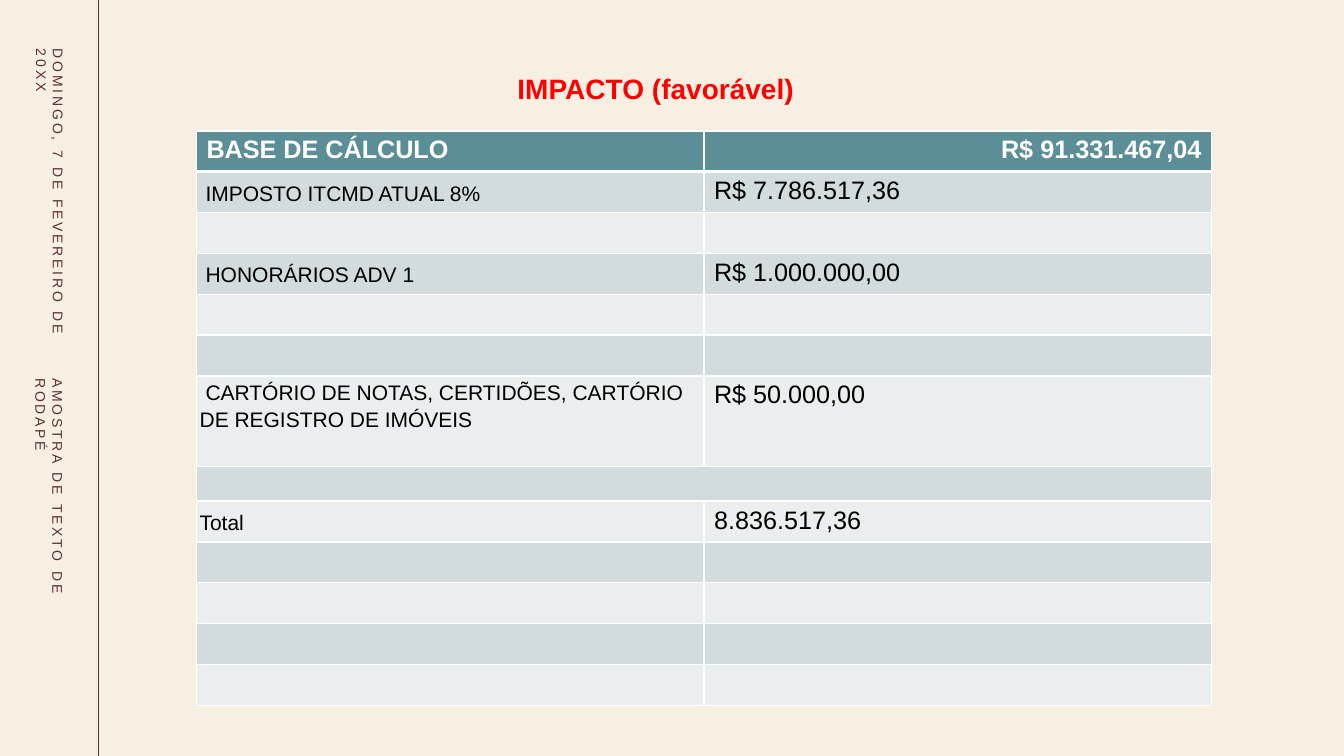
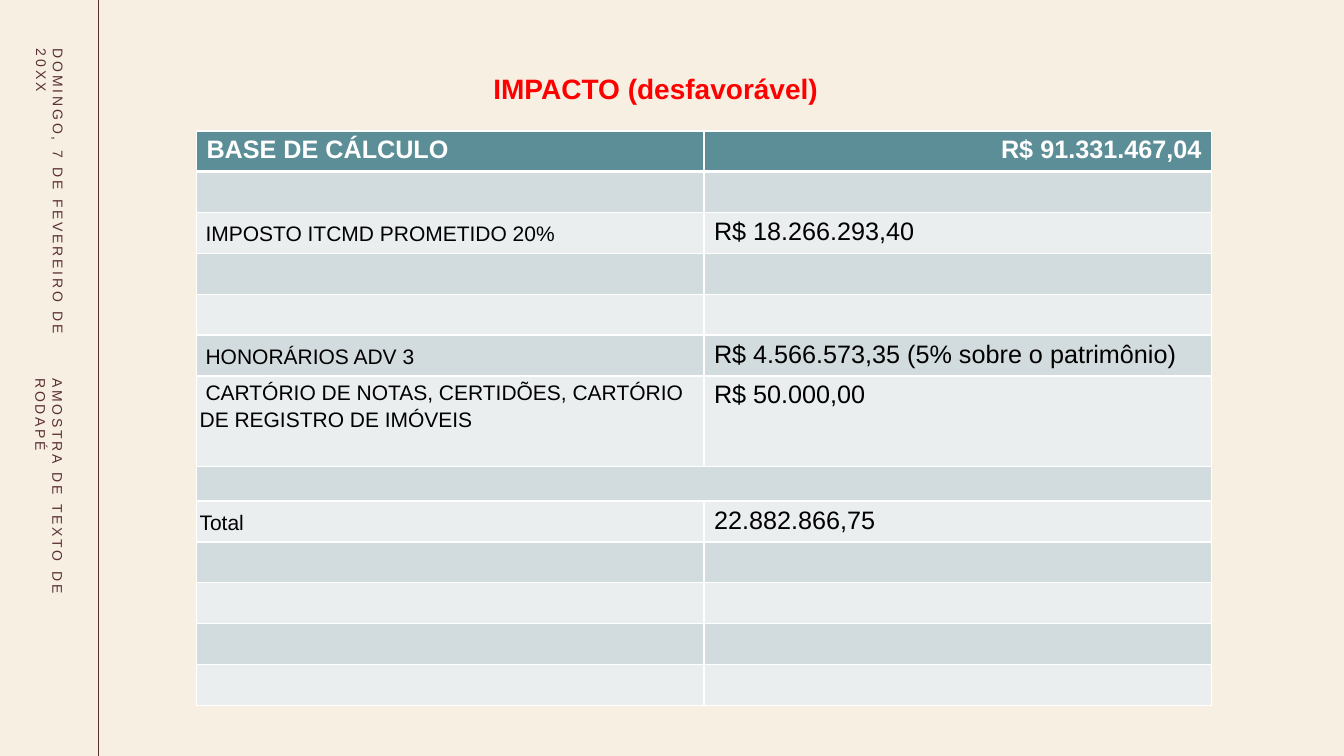
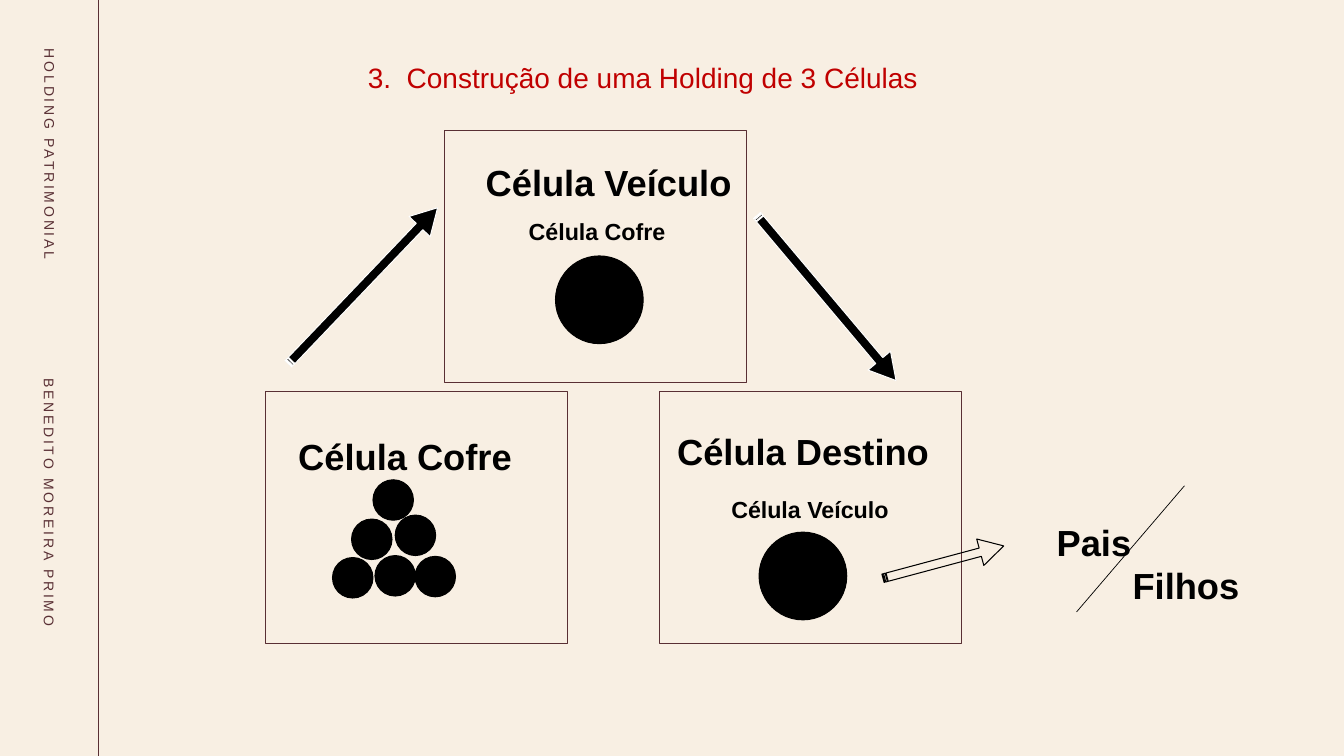
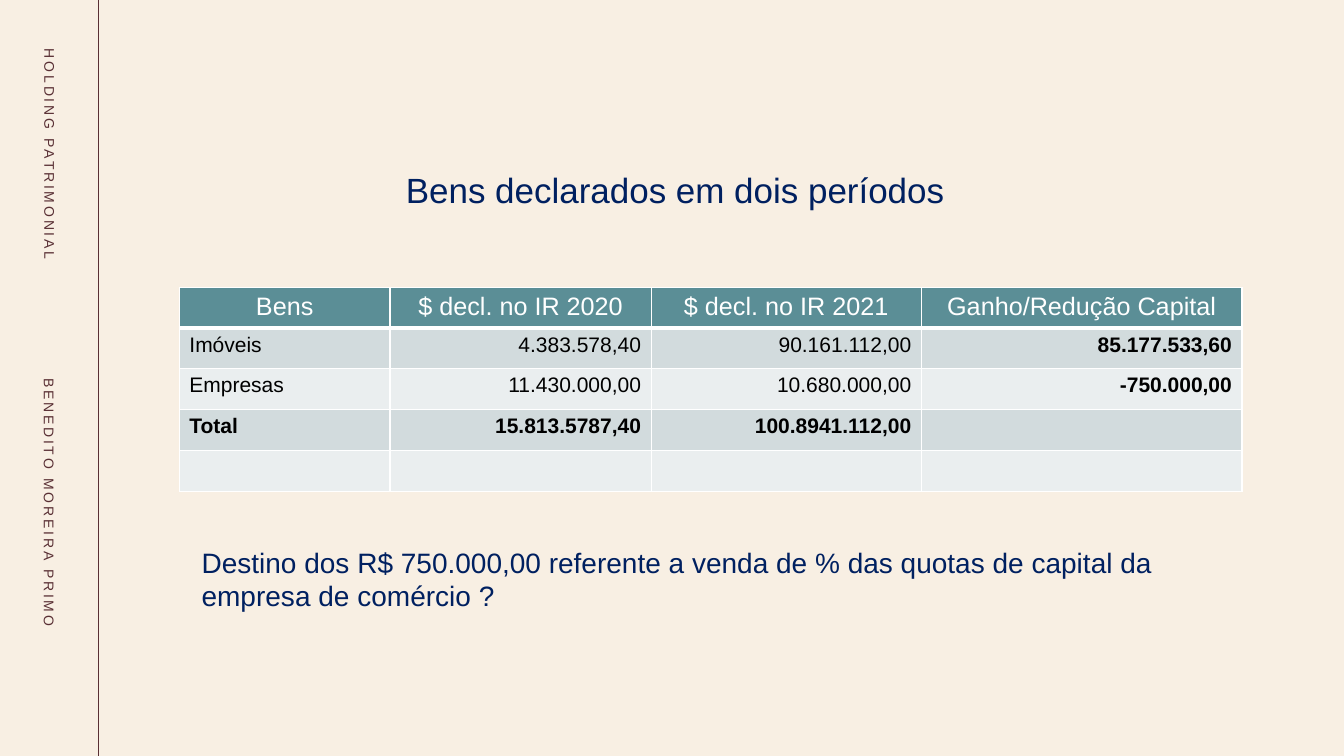
import pptx
import pptx.util
import pptx.dml.color
import pptx.enum.text
import pptx.enum.shapes
import pptx.oxml
import pptx.oxml.ns
import lxml.etree

Cm = pptx.util.Cm
Pt = pptx.util.Pt
RGB = pptx.dml.color.RGBColor.from_string
Shape = pptx.enum.shapes.MSO_SHAPE
Side = pptx.enum.text.PP_ALIGN
Mid = pptx.enum.text.MSO_ANCHOR.MIDDLE
qn = pptx.oxml.ns.qn

HUES = {"sand": "F8EFE3", "wine": "592F34", "red": "FF0000", "brick": "C00000",
        "navy": "002060", "teal": "5B8E96", "dark": "D2DBDD", "pale": "EAEEEF",
        "white": "FFFFFF", "black": "000000"}
FONT = "Arial"


def put(frame, text, size, hue, bold=False, side=Side.LEFT, gap=None):
    """Write one run into the first paragraph of a text frame."""
    frame.word_wrap = True
    para = frame.paragraphs[0]
    para.alignment = side
    if gap:
        para.line_spacing = gap
    run = para.add_run()
    run.text = text
    run.font.name = FONT
    run.font.size = Pt(size)
    run.font.bold = bold
    run.font.color.rgb = RGB(HUES[hue])
    return run


def grid(slide, left, top, cols, rows):
    """Add a table with a teal header, banded rows and white borders."""
    table = slide.shapes.add_table(len(rows), len(cols), Cm(left), Cm(top),
                                   Cm(sum(cols)), Cm(sum(rows))).table
    table.first_row = table.horz_banding = False
    for col, width in zip(table.columns, cols):
        col.width = Cm(width)
    for r, high in enumerate(rows):
        table.rows[r].height = Cm(high)
        for cell in table.rows[r].cells:
            cell.margin_top = cell.margin_bottom = Cm(0.13 if r == 0 else 0.05)
            cell.fill.solid()
            hue = "teal" if r == 0 else "dark" if r % 2 else "pale"
            cell.fill.fore_color.rgb = RGB(HUES[hue])
            # Borders come before the fill; the header has a thick lower edge
            for n, edge in enumerate(("lnL", "lnR", "lnT", "lnB")):
                thick = (r, edge) in ((0, "lnB"), (1, "lnT"))
                line = lxml.etree.Element(qn("a:" + edge), w=str(Pt(3 if thick else 1)))
                fill = lxml.etree.SubElement(line, qn("a:solidFill"))
                lxml.etree.SubElement(fill, qn("a:srgbClr"), val=HUES["white"])
                cell._tc.get_or_add_tcPr().insert(n, line)
    return table


deck = pptx.Presentation()
deck.slide_width, deck.slide_height = Cm(33.87), Cm(19.05)
blank = deck.slide_layouts[6]
blank.background.fill.solid()
blank.background.fill.fore_color.rgb = RGB(HUES["sand"])
slides = [deck.slides.add_slide(blank) for _ in range(4)]
good, bad, cells, goods = slides

# Lines: the side rule, which moves to the layout, and the slash
rule, slash = [], []
for keep, slide, ends, hue, width in (
        (rule, good, (2.49, 0, 2.49, 19.05), "wine", 0.75),
        (slash, cells, (29.85, 12.24, 27.13, 15.42), "black", 0.5)):
    line = slide.shapes.add_connector(pptx.enum.shapes.MSO_CONNECTOR.STRAIGHT,
                                      *[Cm(v) for v in ends])
    line.line.color.rgb = RGB(HUES[hue])
    line.line.width = Pt(width)
    lxml.etree.SubElement(line._element.spPr, qn("a:effectLst"))
    keep.append(line)
blank.shapes._spTree.append(rule[0]._element)

# Turned footers in the side band
dated = ("DOMINGO, 7 DE FEVEREIRO DE 20XX", "AMOSTRA DE TEXTO DE RODAPÉ")
named = ("HOLDING PATRIMONIAL", "BENEDITO MOREIRA PRIMO")
for slide, words in zip(slides, (dated, dated, named, named)):
    for text, left, top, width in zip(words, (-2.59, -2.26), (3.84, 11.79), (7.7, 7.01)):
        box = slide.shapes.add_textbox(Cm(left), Cm(top), Cm(width), Cm(2.49))
        box.rotation = 90
        frame = box.text_frame
        frame.margin_left = frame.margin_right = 0
        frame.margin_top = frame.margin_bottom = Cm(0.2)
        frame.vertical_anchor = Mid
        run = put(frame, text, 10, "wine")
        run._r.get_or_add_rPr().set("spc", "200")

# Titles and the closing question
for slide, spot, text, size, hue, bold, side in (
        (good, (4.7, 1.68, 23.65, 1.12), "IMPACTO (favorável)",
         20, "red", True, Side.CENTER),
        (bad, (4.7, 1.68, 23.65, 1.12), "IMPACTO (desfavorável)",
         20, "red", True, Side.CENTER),
        (cells, (6.63, 1.4, 19.15, 1.12), "3.  Construção de uma Holding de 3 Células",
         20, "brick", False, Side.CENTER),
        (goods, (9.98, 4.11, 14.78, 1.32), "Bens declarados em dois períodos",
         25, "navy", False, Side.LEFT),
        (goods, (4.83, 13.61, 26.09, 1.96),
         "Destino dos R$ 750.000,00 referente a venda de % das quotas de capital da "
         "empresa de comércio ?", 20, "navy", False, Side.LEFT)):
    box = slide.shapes.add_textbox(*[Cm(v) for v in spot])
    put(box.text_frame, text, size, hue, bold, side)

# Impact tables: row number, label, amount
deed = (6, "CARTÓRIO DE NOTAS, CERTIDÕES, CARTÓRIO DE REGISTRO DE IMÓVEIS", "R$ 50.000,00")
costs = (
    (good, ((1, "IMPOSTO ITCMD ATUAL 8%", "R$ 7.786.517,36"),
            (3, "HONORÁRIOS ADV 1", "R$ 1.000.000,00"),
            deed, (8, "Total", "8.836.517,36"))),
    (bad, ((2, "IMPOSTO ITCMD PROMETIDO 20%", "R$ 18.266.293,40"),
           (5, "HONORÁRIOS ADV 3", "R$ 4.566.573,35 (5% sobre o patrimônio)"),
           deed, (8, "Total", "22.882.866,75"))))
for slide, items in costs:
    table = grid(slide, 4.95, 3.3, [12.79] * 2,
                 [1] + [1.03] * 5 + [2.29, 0.81] + [1.03] * 5)
    table.cell(7, 0).merge(table.cell(7, 1))
    put(table.cell(0, 0).text_frame, "BASE DE CÁLCULO", 18, "white", True)
    put(table.cell(0, 1).text_frame, "R$ 91.331.467,04", 18, "white", True, Side.RIGHT)
    for r, label, sum_ in items:
        head, cash = table.cell(r, 0), table.cell(r, 1)
        head.margin_left = head.margin_right = Cm(0.08)
        if r != 6:
            head.vertical_anchor = Mid
        put(head.text_frame, label, 15, "black", gap=1.15)
        if label != "Total":
            para = head.text_frame.paragraphs[0]
            para._p.get_or_add_pPr().set("indent", str(Cm(0.15)))
        cash.margin_top = Cm(0.13)
        put(cash.text_frame, sum_, 18, "black")

# Cell diagram: boxes, circles and arrows
forms = [(Shape.RECTANGLE, (x, y, 7.62, 6.35), 0, "sand", "wine")
         for x, y in ((11.2, 3.28), (6.68, 9.86), (16.61, 9.86))]
forms += [(Shape.OVAL, (x, y, 2.21, 2.21), 0, "black", "black")
          for x, y in ((14, 6.45), (19.13, 13.41))]
forms += [(Shape.OVAL, (x, y, 1.02, 1.02), 0, "black", "black")
          for x, y in ((9.4, 12.09), (8.86, 13.08), (9.96, 12.98),
                       (8.38, 14.05), (9.45, 14), (10.46, 14.02))]
forms += [(Shape.STRIPED_RIGHT_ARROW, *rest) for rest in (
    ((6.43, 6.83, 5.44, 0.74), 313.7, "black", "white"),
    ((18.11, 7.14, 5.44, 0.74), 49.9, "black", "white"),
    ((22.2, 13.82, 3.15, 0.69), 345, None, "black"))]
for kind, spot, turn, fill, edge in forms:
    form = cells.shapes.add_shape(kind, *[Cm(v) for v in spot])
    form.shadow.inherit = False
    form.rotation = turn
    if fill:
        form.fill.solid()
        form.fill.fore_color.rgb = RGB(HUES[fill])
    else:
        form.fill.background()
    form.line.color.rgb = RGB(HUES[edge])
    form.line.width = Pt(0.75)
    if kind == Shape.STRIPED_RIGHT_ARROW:
        form.adjustments[0], form.adjustments[1] = 0.315, 0.888

# Diagram labels
for text, size, spot in (
        ("Célula Veículo", 25.9, (11.53, 3.15, 7.62, 2.34)),
        ("Célula Cofre", 16.6, (12.95, 4.8, 4.19, 1.75)),
        ("Célula Cofre", 25.9, (6.4, 10.06, 7.62, 2.34)),
        ("Célula Destino", 25.9, (16.43, 9.93, 7.62, 2.34)),
        ("Célula Veículo", 16.6, (17.78, 11.81, 5.26, 1.75)),
        ("Pais", 25.9, (26.26, 12.22, 2.62, 2.34)),
        ("Filhos", 25.9, (28.19, 13.31, 3.4, 2.34))):
    box = cells.shapes.add_textbox(*[Cm(v) for v in spot])
    frame = box.text_frame
    frame.margin_left = frame.margin_right = Cm(0.33)
    frame.margin_top = frame.margin_bottom = Cm(0.33)
    put(frame, text, size, "black", True, Side.CENTER, 1.5)

# Declared goods
table = grid(goods, 4.52, 7.24, [5.31, 6.58, 6.81, 8.08], [1] + [1.03] * 4)
facts = (("Bens", "$ decl. no IR 2020", "$ decl. no IR 2021", "Ganho/Redução Capital"),
         ("Imóveis", "4.383.578,40", "90.161.112,00", "85.177.533,60"),
         ("Empresas", "11.430.000,00", "10.680.000,00", "-750.000,00"),
         ("Total", "15.813.5787,40", "100.8941.112,00"))
for r, row in enumerate(facts):
    for c, text in enumerate(row):
        cell = table.cell(r, c)
        cell.margin_top = Cm(0.13)
        if r == 0:
            put(cell.text_frame, text, 18, "white", side=Side.CENTER)
        else:
            put(cell.text_frame, text, 15, "black", r == 3 or c == 3,
                Side.RIGHT if c else Side.LEFT)

deck.save("out.pptx")
